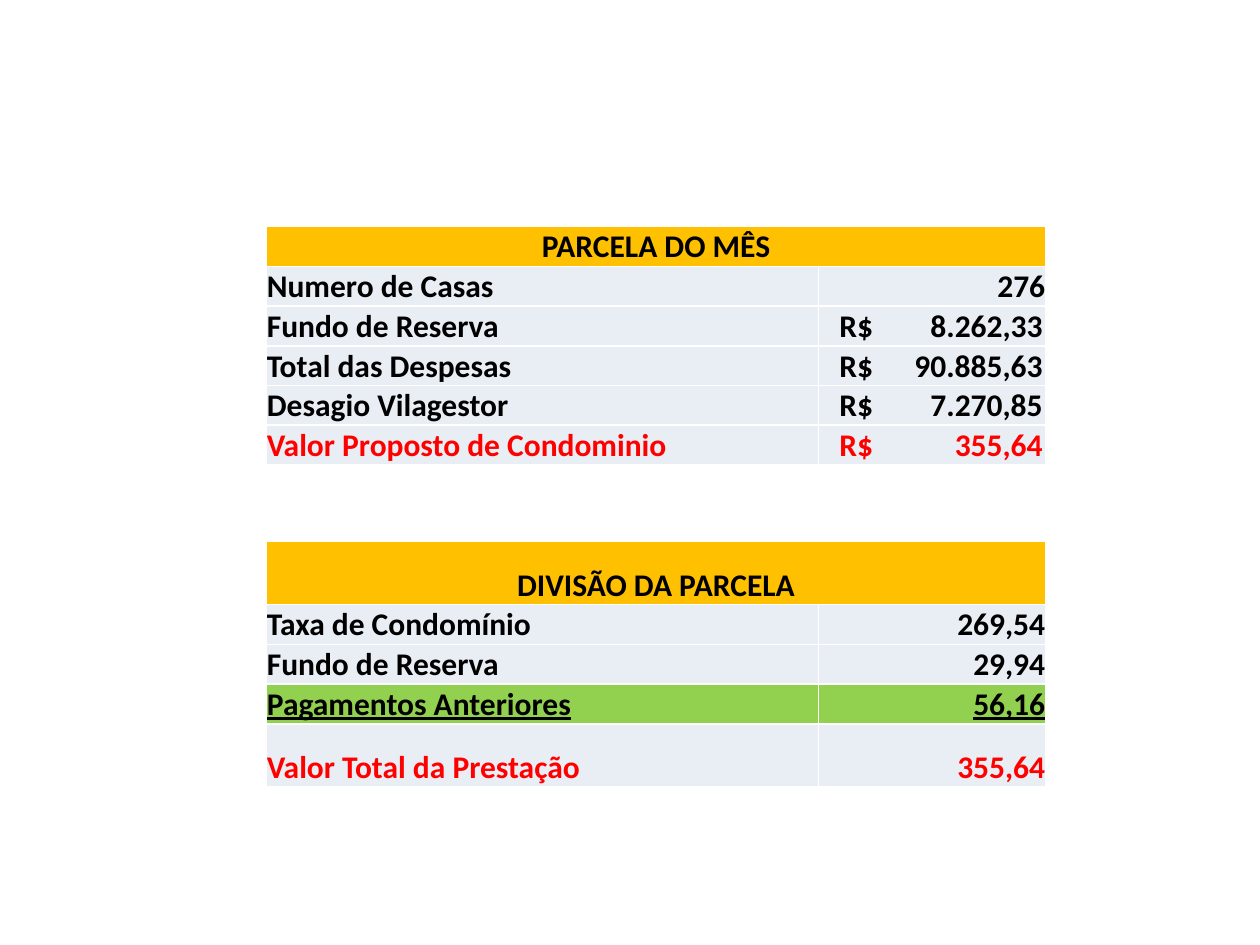
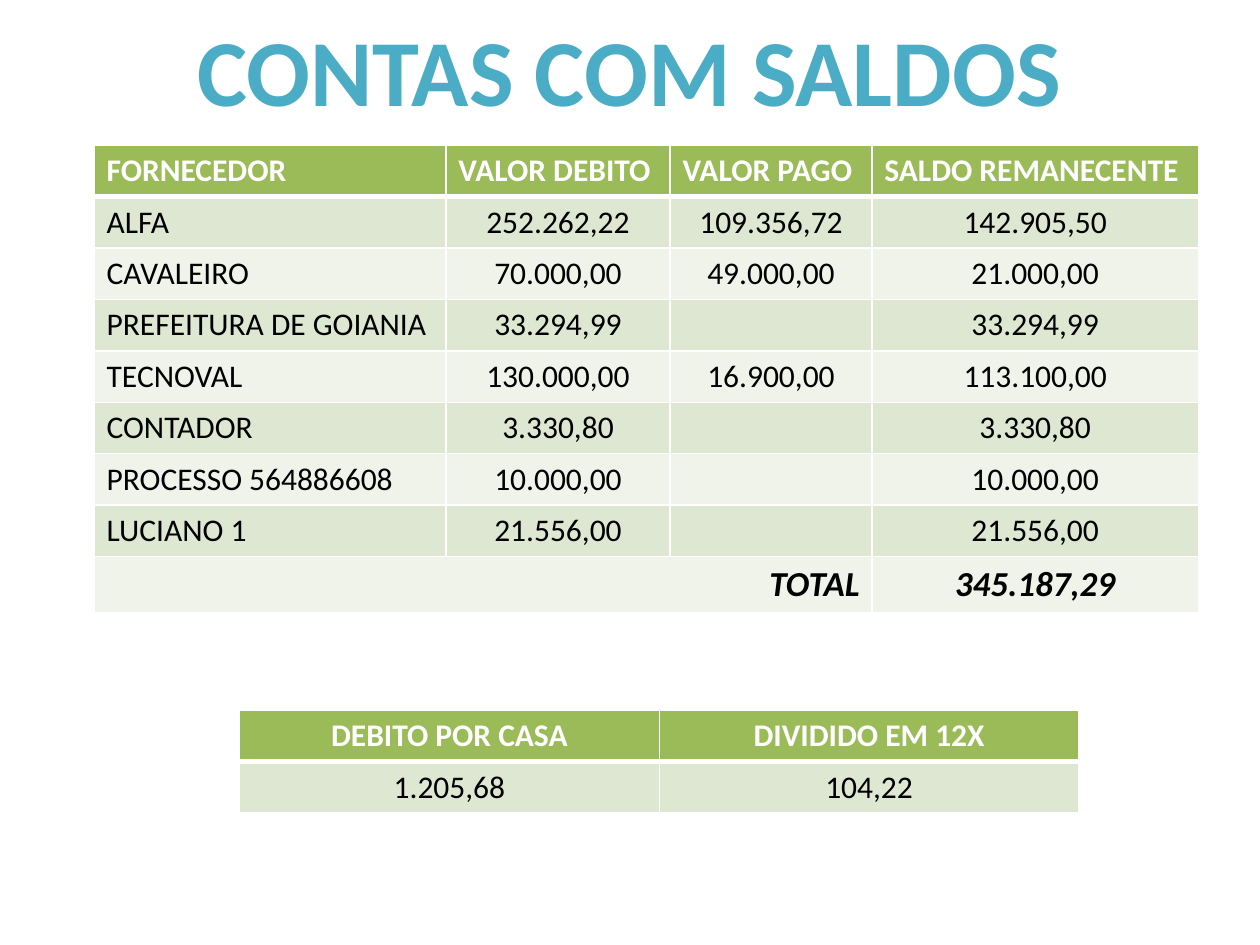
import pptx
import pptx.util
import pptx.dml.color
import pptx.enum.text
import lxml.etree
from pptx.util import Cm, Pt

ALIGN = pptx.enum.text.PP_ALIGN
ANCHOR = pptx.enum.text.MSO_ANCHOR
NS = "http://schemas.openxmlformats.org/drawingml/2006/main"
FONT = "Calibri"
WHITE, BLACK, RED = "FFFFFF", "000000", "FF0000"
AMBER, PALE_BLUE, LIME = "FFC000", "E9EDF4", "92D050"
GREEN, GREEN_MID, GREEN_PALE = "9BBB59", "DEE7D1", "EFF3EA"
TEAL = "4BACC6"


def rgb(hex_colour):
    return pptx.dml.color.RGBColor.from_string(hex_colour)


def add_xml(parent, tag, **attributes):
    return lxml.etree.SubElement(parent, f"{{{NS}}}{tag}", attributes)


# Row styles: "al" holds one letter per column (l, c, r)
BASE = dict(size=18, color=BLACK, bold=False, italic=False, underline=False,
            height=1.02, anchor=ANCHOR.TOP, margins=(0.25, 0.25, 0.13, 0.13),
            line_below=1, al="lccc")

# Instalment tables: tight margins, bold text
ITEM = BASE | dict(fill=PALE_BLUE, bold=True, height=0.8, al="lr",
                   anchor=ANCHOR.BOTTOM, margins=(0.02, 0.02, 0.02, 0))
BANNER = ITEM | dict(fill=AMBER, al="cc", anchor=ANCHOR.MIDDLE)
TALL_BANNER = BANNER | dict(height=1.27, anchor=ANCHOR.BOTTOM)
RESULT = ITEM | dict(color=RED)
TALL_RESULT = RESULT | dict(height=1.27)
PREVIOUS = ITEM | dict(fill=LIME, underline=True)

# Balance tables: green header and bands
HEAD = BASE | dict(fill=GREEN, color=WHITE, bold=True, line_below=3, al="llll")
HEAD_CENTRED = HEAD | dict(al="cc")
BANDS = [BASE | dict(fill=GREEN_MID), BASE | dict(fill=GREEN_PALE)]
TOTAL = BANDS[1] | dict(size=20, bold=True, italic=True, height=1.1, al="rrrc")
VALUES = BANDS[0] | dict(al="cc")

# Table contents: None joins a cell to the one on its left,
# a tab sets the currency sign and the amount on tab stops
instalment = [
    (BANNER, ["PARCELA DO MÊS", None]),
    (ITEM, ["Numero de Casas", "276"]),
    (ITEM, ["Fundo de Reserva", "\tR$\t8.262,33"]),
    (ITEM, ["Total das Despesas", "\tR$\t90.885,63"]),
    (ITEM, ["Desagio Vilagestor", "\tR$\t7.270,85"]),
    (RESULT, ["Valor Proposto de Condominio", "\tR$\t355,64"]),
]
division = [
    (TALL_BANNER, ["DIVISÃO DA PARCELA", None]),
    (ITEM, ["Taxa de Condomínio", "269,54"]),
    (ITEM, ["Fundo de Reserva", "29,94"]),
    (PREVIOUS, ["Pagamentos Anteriores", "56,16"]),
    (TALL_RESULT, ["Valor Total da Prestação", "355,64"]),
]
suppliers = [
    ["ALFA", "252.262,22", "109.356,72", "142.905,50"],
    ["CAVALEIRO", "70.000,00", "49.000,00", "21.000,00"],
    ["PREFEITURA DE GOIANIA", "33.294,99", "", "33.294,99"],
    ["TECNOVAL", "130.000,00", "16.900,00", "113.100,00"],
    ["CONTADOR", "3.330,80", "", "3.330,80"],
    ["PROCESSO 564886608", "10.000,00", "", "10.000,00"],
    ["LUCIANO 1", "21.556,00", "", "21.556,00"],
]
balances = [
    (HEAD, ["FORNECEDOR", "VALOR DEBITO", "VALOR PAGO", "SALDO REMANECENTE"]),
    *[(BANDS[i % 2], texts) for i, texts in enumerate(suppliers)],
    (TOTAL, ["TOTAL", None, None, "345.187,29"]),
]
per_house = [
    (HEAD_CENTRED, ["DEBITO POR CASA", "DIVIDIDO EM 12X"]),
    (VALUES, ["1.205,68", "104,22"]),
]

# Presentation and slides
prs = pptx.Presentation()
prs.slide_width, prs.slide_height = Cm(25.4), Cm(19.05)
instalment_slide = prs.slides.add_slide(prs.slide_layouts[6])
balance_slide = prs.slides.add_slide(prs.slide_layouts[5])

# Title of the balance slide
title = balance_slide.shapes.title
title.left, title.top, title.width, title.height = Cm(3.63), Cm(0.1), Cm(18.11), Cm(2.57)
tf = title.text_frame
tf.word_wrap = False
p = tf.paragraphs[0]
p.alignment = ALIGN.CENTER
r = p.add_run()
r.text = "CONTAS COM SALDOS"
r.font.name, r.font.size, r.font.bold = FONT, Pt(54), True
r.font.color.rgb = rgb(TEAL)

# Tables: slide, left, top, column widths, rows
tables = [
    (instalment_slide, 5.36, 4.57, [11.14, 4.59], instalment),
    (instalment_slide, 5.36, 10.92, [11.14, 4.59], division),
    (balance_slide, 1.9, 2.93, [7.09, 4.52, 4.07, 6.58], balances),
    (balance_slide, 4.83, 14.32, [8.46, 8.46], per_house),
]
alignments = dict(l=ALIGN.LEFT, c=ALIGN.CENTER, r=ALIGN.RIGHT)

for s, left, top, widths, rows in tables:
    heights = [style["height"] for style, texts in rows]
    table = s.shapes.add_table(len(rows), len(widths), Cm(left), Cm(top),
                               Cm(sum(widths)), Cm(sum(heights))).table
    table.first_row = table.horz_banding = False
    for column, width in zip(table.columns, widths):
        column.width = Cm(width)

    for i, (style, texts) in enumerate(rows):
        table.rows[i].height = Cm(style["height"])
        line_above = rows[i - 1][0]["line_below"] if i else 1
        start = 0
        for j, text in enumerate(texts):
            cell = table.cell(i, j)

            # Borders, fill and margins
            tcPr = cell._tc.get_or_add_tcPr()
            edges = dict(lnL=1, lnR=1, lnT=line_above, lnB=style["line_below"])
            for tag, points in edges.items():
                fill = add_xml(add_xml(tcPr, tag, w=str(Pt(points))), "solidFill")
                add_xml(fill, "srgbClr", val=WHITE)
            cell.fill.solid()
            cell.fill.fore_color.rgb = rgb(style["fill"])
            (cell.margin_left, cell.margin_right,
             cell.margin_top, cell.margin_bottom) = [Cm(m) for m in style["margins"]]
            cell.vertical_anchor = style["anchor"]

            # Joined cells
            if text is None:
                if j + 1 == len(texts) or texts[j + 1] is not None:
                    table.cell(i, start).merge(cell)
                continue
            start = j

            # Text
            p = cell.text_frame.paragraphs[0]
            p.alignment = alignments[style["al"][j]]
            if not text:
                p.font.size = Pt(style["size"])
                continue
            if "\t" in text:
                p.alignment = ALIGN.LEFT
                stops = add_xml(p._p.get_or_add_pPr(), "tabLst")
                add_xml(stops, "tab", pos=str(Cm(0.4)), algn="l")
                add_xml(stops, "tab", pos=str(Cm(4.5)), algn="r")
            r = p.add_run()
            r.text = text
            r.font.name, r.font.size = FONT, Pt(style["size"])
            r.font.bold, r.font.italic = style["bold"], style["italic"]
            r.font.underline = style["underline"]
            r.font.color.rgb = rgb(style["color"])

prs.save("out.pptx")
